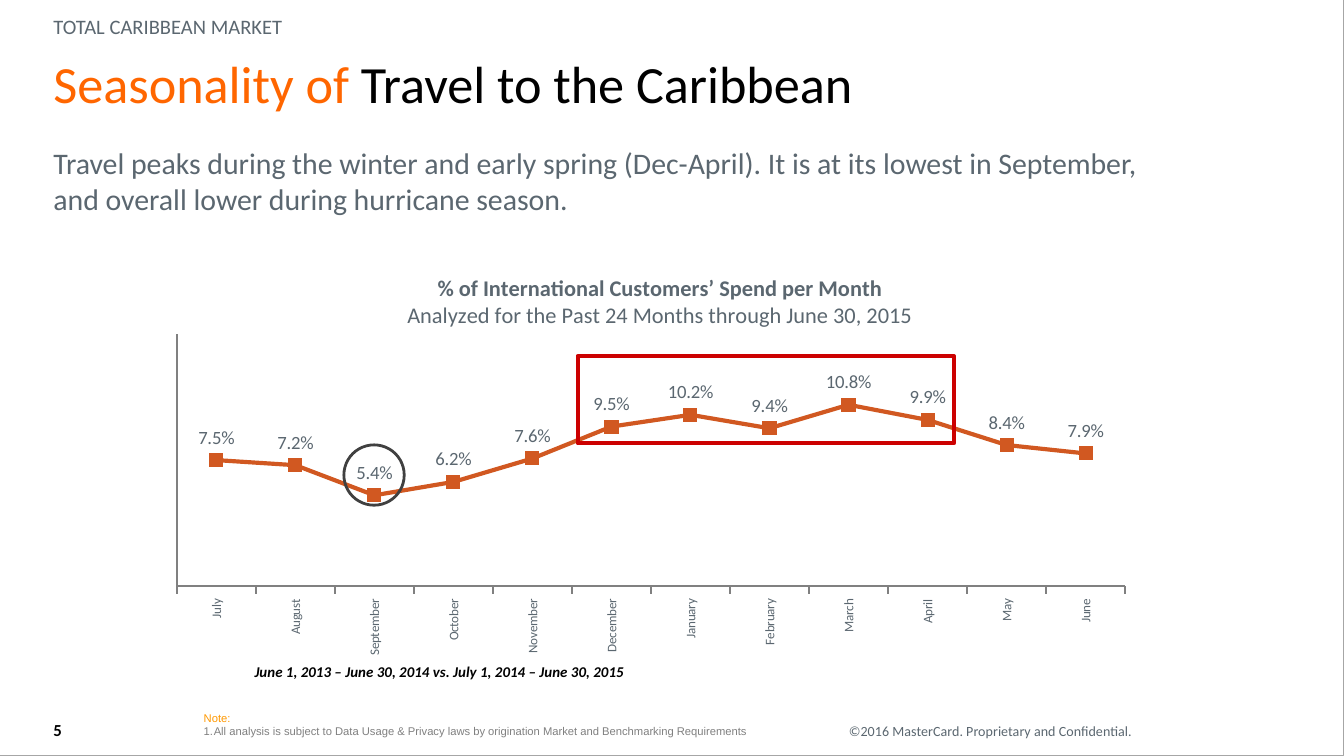
from dataclasses import dataclass

from lxml import etree
from pptx import Presentation
from pptx import util as u
from pptx.chart import data as cd
from pptx.dml.color import RGBColor
from pptx.enum import chart as ch, shapes, text
from pptx.oxml import parse_xml
from pptx.oxml.ns import nsdecls, qn


@dataclass
class Theme:
    face: str = "Calibri"
    small: str = "Arial"
    ink: str = "000000"
    slate: str = "5B6770"
    grey: str = "808080"
    pale: str = "A6A6A6"
    dark: str = "404040"
    orange: str = "FF6600"
    amber: str = "FF9900"
    rust: str = "D15821"
    red: str = "CC0000"
    head: float = 28
    lead: float = 16
    title: float = 12
    top: float = 11
    label: float = 10
    page: float = 9
    date: float = 8
    legal: float = 7.5
    axis: float = 7
    note: float = 6


class Deck:
    def __init__(self, theme):
        self.theme = theme
        self.file = Presentation()
        self.file.slide_width, self.file.slide_height = u.Cm(25.4), u.Cm(14.29)
        self.slide = self.file.slides.add_slide(self.file.slide_layouts[6])

    def font(self, font, size, hue, bold=False, slant=False, face=None):
        font.name = face or self.theme.face
        font.size = u.Pt(size)
        font.bold, font.italic = bold, slant
        font.color.rgb = RGBColor.from_string(hue)

    def frame(self, shape, anchor, pads=(0.25, 0.13, 0.25, 0.13)):
        body = shape.text_frame
        body.word_wrap = True
        body.vertical_anchor = anchor
        (body.margin_left, body.margin_top,
         body.margin_right, body.margin_bottom) = map(u.Cm, pads)
        return body

    def text(self, box, runs, size, anchor=text.MSO_ANCHOR.TOP, align=text.PP_ALIGN.LEFT,
             gap=None, pads=(0.25, 0, 0.25, 0), bold=False, slant=False):
        shape = self.slide.shapes.add_textbox(*map(u.Cm, box))
        para = self.frame(shape, anchor, pads).paragraphs[0]
        para.alignment = align
        if gap:
            para.line_spacing = gap
        self.font(para.font, size, runs[0][1], bold, slant)
        for words, hue in runs:
            run = para.add_run()
            run.text = words
            if hue != runs[0][1]:
                run.font.color.rgb = RGBColor.from_string(hue)

    def shape(self, kind, box, hue=None, width=0):
        shape = self.slide.shapes.add_shape(kind, *map(u.Cm, box))
        shape.shadow.inherit = False
        shape.fill.background()
        if hue:
            shape.line.color.rgb = RGBColor.from_string(hue)
            shape.line.width = u.Pt(width)
        else:
            shape.line.fill.background()
        return shape

    def note(self, box, head, item):
        t = self.theme
        body = self.frame(self.shape(shapes.MSO_SHAPE.ROUNDED_RECTANGLE, box),
                          text.MSO_ANCHOR.BOTTOM)
        for para, words, hue in ((body.paragraphs[0], head, t.amber),
                                 (body.add_paragraph(), item, t.grey)):
            para.text = words
            para.alignment = text.PP_ALIGN.LEFT
            if words == item:
                props = para._p.get_or_add_pPr()
                props.set("marL", str(u.Cm(0.19)))
                props.set("indent", str(-u.Cm(0.19)))
                etree.SubElement(props, qn("a:buAutoNum"), type="arabicPeriod")
            self.font(para.font, t.note, hue, face=t.small)
            if words == item:
                para.runs[0].font.color.rgb = RGBColor.from_string(hue)

    def place(self, parent, **spots):
        old = parent.find(qn("c:layout"))
        if old is not None:
            parent.remove(old)
        tags = "".join(f'<c:{k} val="{v}"/>' for k, v in spots.items())
        return parse_xml(f'<c:layout {nsdecls("c")}><c:manualLayout>{tags}'
                         '</c:manualLayout></c:layout>')

    def chart(self, box, months, shares, lines):
        t = self.theme
        data = cd.CategoryChartData(number_format="0.0%")
        data.categories = months
        data.add_series("Series 1", shares)
        chart = self.slide.shapes.add_chart(
            ch.XL_CHART_TYPE.LINE_MARKERS, *map(u.Cm, box), data).chart
        self.font(chart.font, t.axis, t.slate)
        chart.has_legend = False

        title = chart.chart_title
        body = title.text_frame
        for i, words in enumerate(lines):
            para = body.add_paragraph() if i else body.paragraphs[0]
            run = para.add_run()
            run.text = words
            self.font(run.font, t.title, t.slate, bold=i == 0)
        title.include_in_layout = True
        title._element.find(qn("c:tx")).addnext(self.place(
            title._element, xMode="edge", yMode="edge", x=0.25, y=0.03))
        area = chart._chartSpace.chart.plotArea
        area.insert(0, self.place(area, layoutTarget="inner", xMode="edge", yMode="edge",
                                  x=0.021, y=0.179, w=0.959, h=0.571))

        cats, vals = chart.category_axis, chart.value_axis
        for axis in (cats, vals):
            axis.has_major_gridlines = False
            axis.format.line.color.rgb = RGBColor.from_string(t.grey)
            axis.format.line.width = u.Pt(0.75)
        cats.major_tick_mark = ch.XL_TICK_MARK.OUTSIDE
        self.font(cats.tick_labels.font, t.axis, t.slate)
        cats._element.find(qn("c:txPr")).find(qn("a:bodyPr")).set("rot", "-5400000")
        vals.minimum_scale, vals.maximum_scale, vals.major_unit = 0, 0.15, 0.05
        vals.major_tick_mark = ch.XL_TICK_MARK.NONE
        vals.tick_label_position = ch.XL_TICK_LABEL_POSITION.NONE

        plot = chart.plots[0]
        plot.vary_by_categories = False
        line = plot.series[0]
        rust = RGBColor.from_string(t.rust)
        line.smooth = False
        line.format.line.color.rgb = rust
        line.format.line.width = u.Pt(2.25)
        mark = line.marker
        mark.style, mark.size = ch.XL_MARKER_STYLE.SQUARE, 7
        mark.format.fill.solid()
        mark.format.fill.fore_color.rgb = rust
        mark.format.line.color.rgb = rust
        tags = line.data_labels
        tags.show_value = True
        tags.position = ch.XL_LABEL_POSITION.ABOVE
        tags.number_format, tags.number_format_is_linked = "0.0%", False
        self.font(tags.font, t.label, t.slate)


def main():
    t = Theme()
    deck = Deck(t)
    kind, mid, low = shapes.MSO_SHAPE, text.MSO_ANCHOR.MIDDLE, text.MSO_ANCHOR.BOTTOM
    full = (0.25, 0.13, 0.25, 0.13)
    deck.shape(kind.RECTANGLE, (0, 0, 25.4, 14.29), t.pale, 0.5)
    deck.text((15.32, 13.64, 6.32, 0.36),
              [("©2016 MasterCard. Proprietary and Confidential.", t.slate)],
              t.legal, mid, text.PP_ALIGN.RIGHT)
    deck.text((0.76, 1.68, 20.6, 1.35),
              [("Seasonality of ", t.orange), ("Travel to the Caribbean", t.ink)],
              t.head, low, gap=0.8, pads=(0.25, 0.13, 0.25, 0.96))
    deck.text((0.76, 2.74, 21.23, 0.71),
              [("Travel peaks during the winter and early spring (Dec-April). It is at its "
                "lowest in September, and overall lower during hurricane season.", t.slate)],
              t.lead)
    deck.chart((2.95, 4.83, 18.69, 8.33),
               ["July", "August", "September", "October", "November", "December",
                "January", "February", "March", "April", "May", "June"],
               [0.075, 0.072, 0.054, 0.062, 0.076, 0.095,
                0.102, 0.094, 0.108, 0.099, 0.084, 0.079],
               ["% of International Customers’ Spend per Month",
                "Analyzed for the Past 24 Months through June 30, 2015"])
    deck.note((3.56, 13.26, 17.58, 0.86), "Note:",
              "All analysis is subject to Data Usage & Privacy laws by origination "
              "Market and Benchmarking Requirements")
    deck.shape(kind.RECTANGLE, (10.92, 6.73, 7.11, 1.65), t.red, 2.25)
    deck.shape(kind.OVAL, (6.5, 8.41, 1.14, 1.14), t.dark, 1.5)
    deck.text((0.76, 0.05, 20.6, 0.81), [("TOTAL CARIBBEAN MARKET", t.slate)],
              t.top, low, gap=0.85, pads=full)
    deck.text((1.96, 12.4, 12.7, 0.61),
              [("June 1, 2013 – June 30, 2014 vs. July 1, 2014 – June 30, 2015", t.ink)],
              t.date, align=text.PP_ALIGN.CENTER, pads=full, bold=True, slant=True)
    deck.text((0.76, 13.61, 0.97, 0.36), [("5", t.ink)], t.page, mid, bold=True)
    deck.file.save("out.pptx")


if __name__ == "__main__":
    main()
